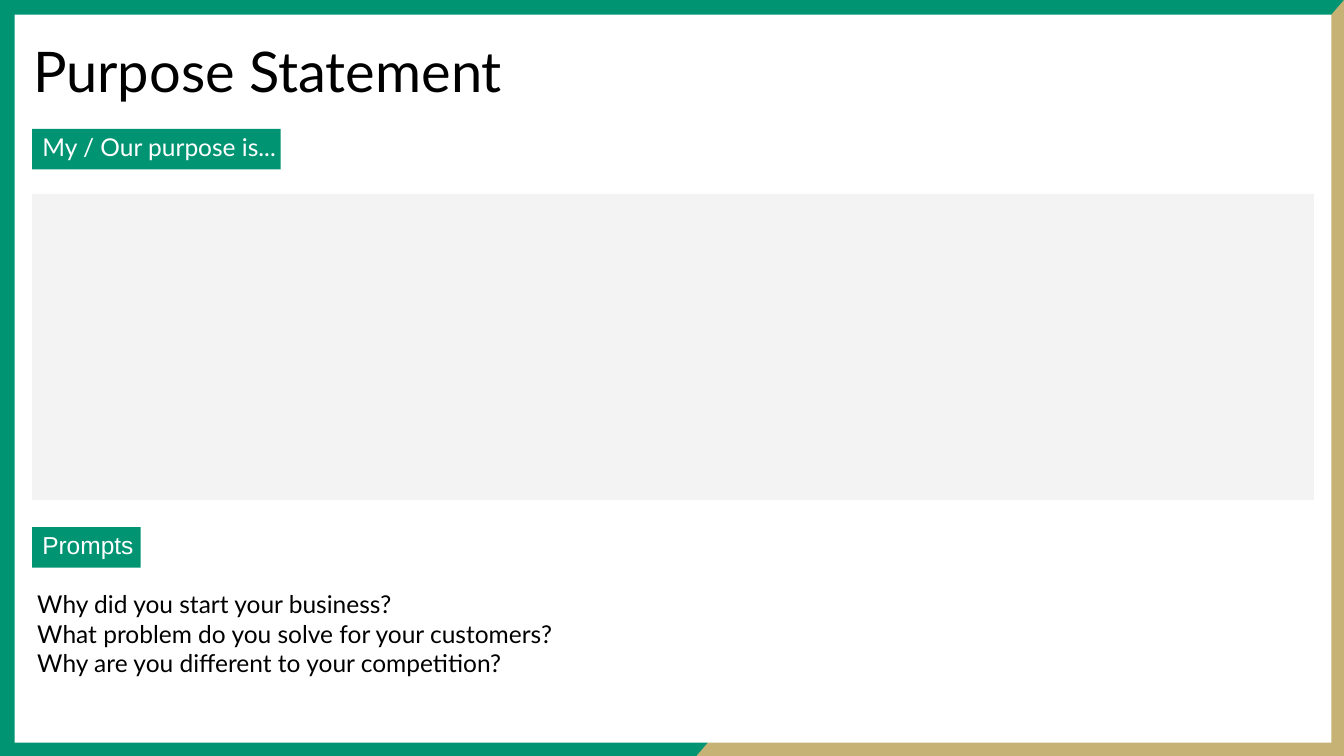
"""Build the Purpose Statement worksheet slide."""
from lxml.etree import SubElement
from pptx import Presentation
from pptx.dml.color import RGBColor
from pptx.enum.text import MSO_ANCHOR, MSO_AUTO_SIZE, PP_ALIGN
from pptx.enum.shapes import MSO_SHAPE
from pptx.oxml.ns import qn
from pptx.util import Pt

GREEN, GOLD, WHITE, GREY, BLACK = "009473", "C7B276", "FFFFFF", "F3F3F3", "000000"
WIDTH, HEIGHT = 1920, 1080
LEFT = 46


def paint(shape, color):
    shape.fill.solid()
    shape.fill.fore_color.rgb = RGBColor.from_string(color)
    shape.line.fill.background()
    shape.shadow.inherit = False


def write(shape, lines, size, font, color, insets):
    frame = shape.text_frame
    frame.text = "\n".join(lines)
    frame.word_wrap = True
    frame.auto_size = MSO_AUTO_SIZE.NONE
    frame.vertical_anchor = MSO_ANCHOR.TOP
    frame.margin_left, frame.margin_top, frame.margin_right, frame.margin_bottom = map(Pt, insets)
    for paragraph in frame.paragraphs:
        paragraph.alignment = PP_ALIGN.LEFT
        paragraph.space_before = Pt(0)
        for run in paragraph.runs:
            run.font.size = Pt(size)
            run.font.name = font
            run.font.color.rgb = RGBColor.from_string(color)


deck = Presentation()
deck.slide_width, deck.slide_height = Pt(WIDTH), Pt(HEIGHT)
slide = deck.slides.add_slide(deck.slide_layouts[1])
shapes = slide.shapes
slide.background.fill.solid()
slide.background.fill.fore_color.rgb = RGBColor.from_string(GREEN)

corner = shapes.build_freeform(Pt(995), Pt(HEIGHT))
corner.add_line_segments([(Pt(WIDTH), 0), (Pt(WIDTH), Pt(HEIGHT))], close=True)
paint(corner.convert_to_shape(), GOLD)

for left, top, width, height, color in [
    (21, 21, 1881, 1040, WHITE),
    (LEFT, 277, 1831, 437, GREY),
]:
    panel = shapes.add_shape(MSO_SHAPE.RECTANGLE, Pt(left), Pt(top), Pt(width), Pt(height))
    paint(panel, color)

for heading, top, width, font in [
    ("My / Our purpose is...", 184, 355, "Lato"),
    ("Prompts", 753, 155, "Arial"),
]:
    label = shapes.add_shape(MSO_SHAPE.RECTANGLE, Pt(LEFT), Pt(top), Pt(width), Pt(58))
    paint(label, GREEN)
    write(label, [heading], 35, font, WHITE, (14.4, 4.3, 0, 7.2))

title, prompts = shapes.title, slide.placeholders[1]
title.left, title.top, title.width, title.height = Pt(40), Pt(49), Pt(1396), Pt(87)
write(title, ["Purpose Statement"], 80, "Lato", BLACK, (7.2, 3.6, 7.2, 3.6))

questions = [
    "Why did you start your business?",
    "What problem do you solve for your customers?",
    "Why are you different to your competition?",
]
prompts.left, prompts.top, prompts.width, prompts.height = Pt(LEFT), Pt(834.5), Pt(1178), Pt(138)
write(prompts, questions, 35, "Lato", BLACK, (7.2, 7.2, 7.2, 7.2))
for question in prompts.text_frame.paragraphs:
    properties = question._p.get_or_add_pPr()
    properties.set("marL", "0")
    properties.set("indent", "0")
    SubElement(properties, qn("a:buNone"))

for placeholder in (title, prompts):
    shapes._spTree.append(placeholder._element)

deck.save("out.pptx")
